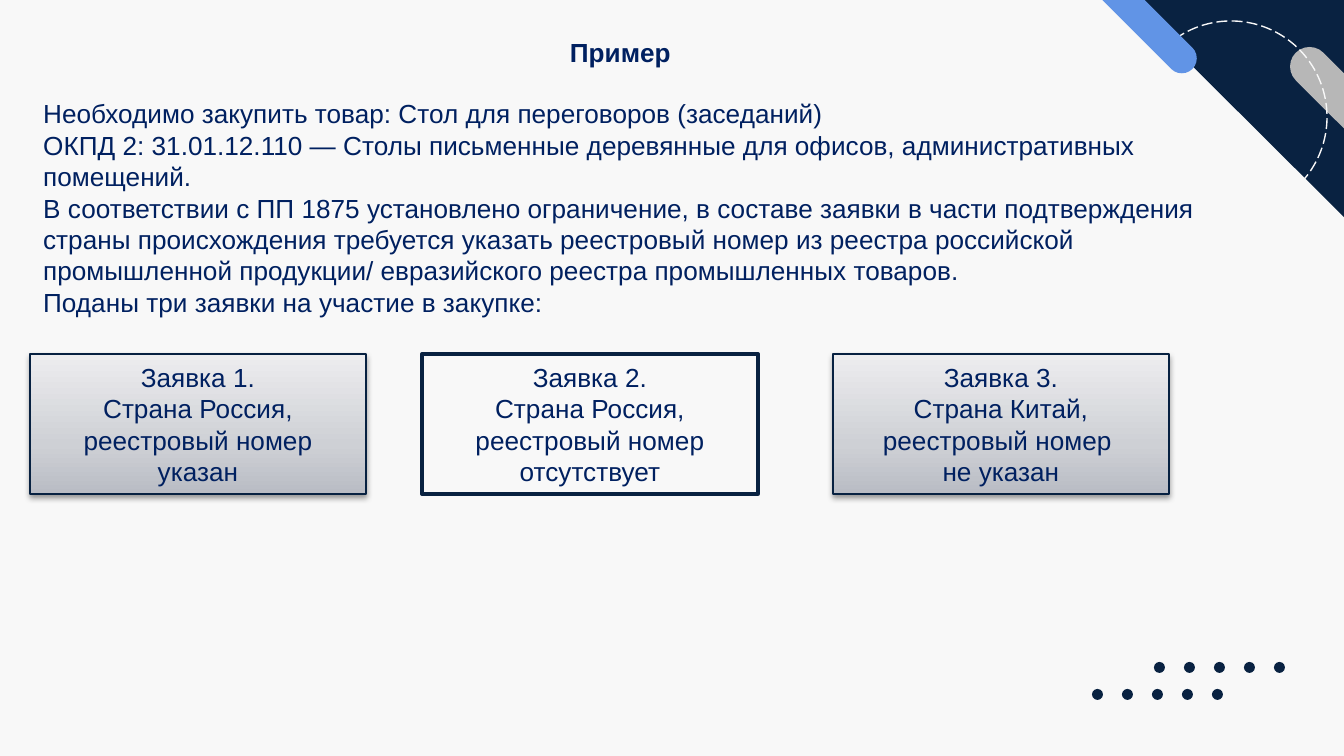
import copy

import pptx
import pptx.dml.color
import pptx.enum.dml
import pptx.enum.shapes
import pptx.enum.text
import pptx.oxml
import pptx.oxml.ns
import pptx.util

PX = 914400 / 134.4
COLORS = {
    "paper": "F8F8F8", "navy": "092241", "border": "072141", "text": "002060",
    "gray": "B7B7B7", "blue": "6194E6",
}
GRADIENT = [(0, "B9BCC4"), (0.35, "CED0D5"), (1, "EDEDEF")]
SHADOW = (
    '<a:outerShdw xmlns:a="http://schemas.openxmlformats.org/drawingml/2006/main" '
    'blurRad="40000" dist="20000" dir="5400000" rotWithShape="0">'
    '<a:srgbClr val="000000"><a:alpha val="38000"/></a:srgbClr></a:outerShdw>'
)
SHAPE = pptx.enum.shapes.MSO_SHAPE
CENTER = pptx.enum.text.PP_ALIGN.CENTER
LEFT = pptx.enum.text.PP_ALIGN.LEFT
rgb = pptx.dml.color.RGBColor.from_string

prs = pptx.Presentation()
prs.slide_width = round(1344 * PX)
prs.slide_height = round(756 * PX)
s = prs.slides.add_slide(prs.slide_layouts[6])
s.background.fill.solid()
s.background.fill.fore_color.rgb = rgb(COLORS["paper"])


def add_shape(kind, box, fill=None, rotation=0):
    sp = s.shapes.add_shape(kind, *[round(v * PX) for v in box])
    sp.shadow.inherit = False
    sp.rotation = rotation
    sp.line.fill.background()
    if fill:
        sp.fill.solid()
        sp.fill.fore_color.rgb = rgb(COLORS[fill])
    else:
        sp.fill.background()
    return sp


def add_text(p, text, align, bold=False):
    p.alignment = align
    r = p.add_run()
    r.text = text
    r.font.name = "Arial"
    r.font.size = pptx.util.Pt(14)
    r.font.bold = bold
    r.font.color.rgb = rgb(COLORS["text"])


# Two staggered rows of dots
for left, top in [(1154, 662), (1092, 689)]:
    for i in range(5):
        add_shape(SHAPE.OVAL, (left + 30 * i, top, 11, 11), "navy")

# Corner decoration
add_shape(SHAPE.RIGHT_TRIANGLE, (1125, -1, 228, 227), "navy", 180)
pill = add_shape(SHAPE.ROUNDED_RECTANGLE, (1271, 93, 169, 39), "gray", 45)
pill.adjustments[0] = 0.5
ring = add_shape(SHAPE.OVAL, (1135, 21, 192, 192))
ring.line.color.rgb = rgb(COLORS["paper"])
ring.line.width = pptx.util.Pt(0.75)
ring.line.dash_style = pptx.enum.dml.MSO_LINE.LONG_DASH
pill = add_shape(SHAPE.ROUNDED_RECTANGLE, (1055, -3, 161, 30), "blue", 45)
pill.adjustments[0] = 0.5

# Title and description
tb = s.shapes.add_textbox(*[round(v * PX) for v in (30, 30, 1188, 298)])
tf = tb.text_frame
tf.word_wrap = True
p = tf.paragraphs[0]
add_text(p, "Пример ", CENTER, bold=True)
p.space_after = pptx.util.Pt(16)
for text in [
    "Необходимо закупить товар: Стол для переговоров (заседаний)",
    "ОКПД 2: 31.01.12.110 — Столы письменные деревянные для офисов, "
    "административных помещений.",
    "В соответствии с ПП 1875 установлено ограничение, в составе заявки в части "
    "подтверждения страны происхождения требуется указать реестровый номер из "
    "реестра российской промышленной продукции/ евразийского реестра "
    "промышленных товаров.",
    "Поданы три заявки на участие в закупке:",
]:
    add_text(tf.add_paragraph(), text, LEFT)

# Three bids; the shaded ones have a gradient and a shadow
bids = [
    (30, True, ["Заявка 1.", "Страна Россия,", "реестровый номер указан"]),
    (422, False, ["Заявка 2.", "Страна Россия,", "реестровый номер", "отсутствует"]),
    (833, True, ["Заявка 3.", "Страна Китай,", "реестровый номер ", "не указан"]),
]
for left, shaded, lines in bids:
    sp = add_shape(SHAPE.RECTANGLE, (left, 354, 336, 140), "paper")
    sp.line.color.rgb = rgb(COLORS["border" if shaded else "navy"])
    sp.line.width = pptx.util.Pt(0.75 if shaded else 2)
    if shaded:
        sp.fill.gradient()
        sp.fill.gradient_angle = 90
        stops = sp._element.spPr.find(".//" + pptx.oxml.ns.qn("a:gsLst"))
        stops.append(copy.deepcopy(stops[-1]))
        for stop, (position, color) in zip(sp.fill.gradient_stops, GRADIENT):
            stop.position = position
            stop.color.rgb = rgb(color)
        effects = sp._element.spPr.find(pptx.oxml.ns.qn("a:effectLst"))
        effects.append(pptx.oxml.parse_xml(SHADOW))
    tf = sp.text_frame
    tf.word_wrap = True
    tf.vertical_anchor = pptx.enum.text.MSO_ANCHOR.MIDDLE
    for i, text in enumerate(lines):
        p = tf.add_paragraph() if i else tf.paragraphs[0]
        add_text(p, text, CENTER)

prs.save("out.pptx")
